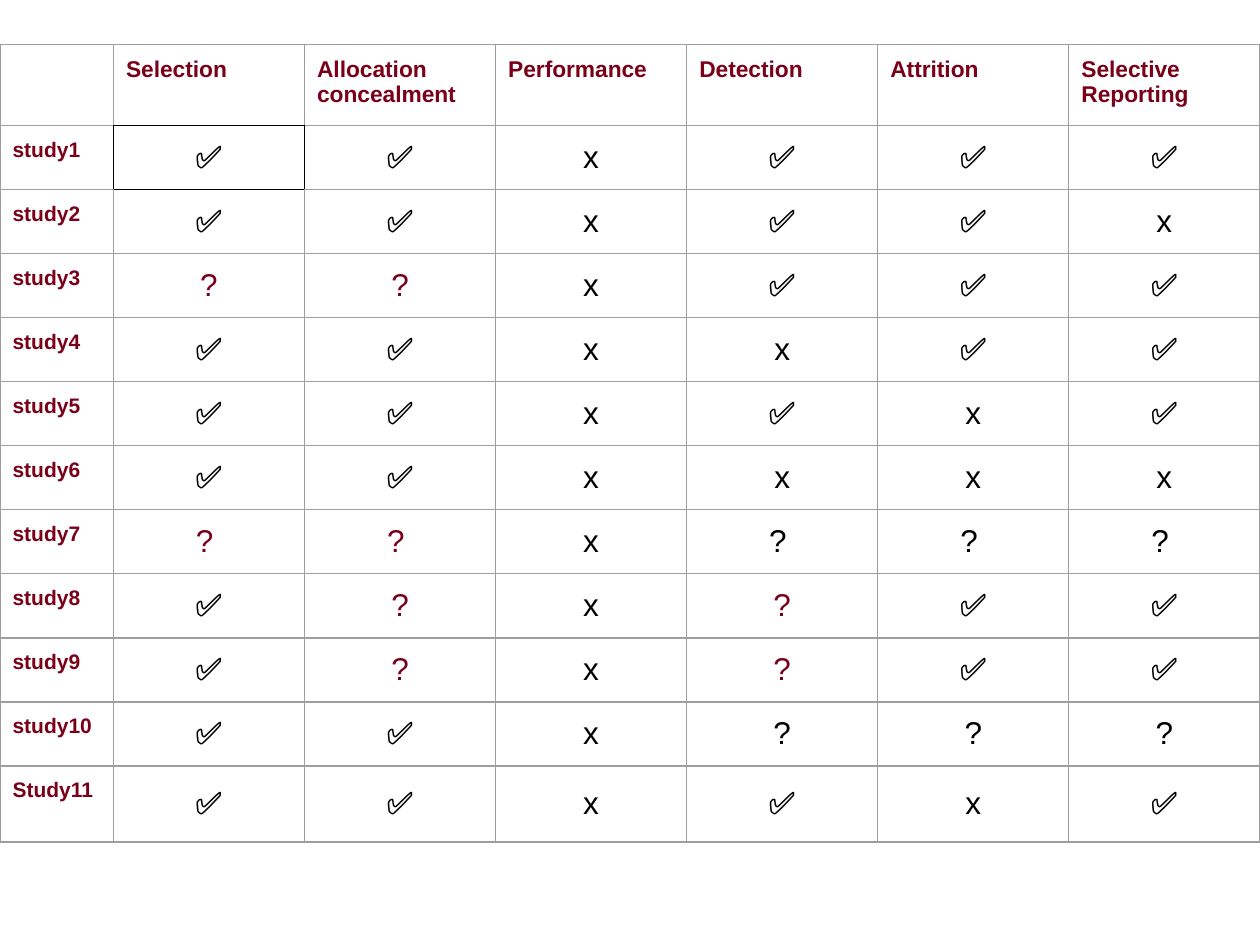
from lxml.etree import SubElement as Sub
from pptx import Presentation
from pptx.dml.color import RGBColor as Rgb
from pptx.enum.text import MSO_ANCHOR as Anchor, PP_ALIGN as Align
from pptx.oxml.ns import qn
from pptx.util import Pt

HUES = {"maroon": "7A0019", "ink": "000000", "grid": "9E9E9E"}
HEADS = ["Selection", "Allocation concealment", "Performance",
         "Detection", "Attrition", "Selective Reporting"]
CHECK, CROSS, ASK, DOUBT = "✅", "x", "?", "doubt"
MARKS = {"v": CHECK, "x": CROSS, "?": ASK, "d": DOUBT}
STUDIES = {
    "study1": "vvxvvv", "study2": "vvxvvx", "study3": "ddxvvv",
    "study4": "vvxxvv", "study5": "vvxvxv", "study6": "vvxxxx",
    "study7": "ddx???", "study8": "vdxdvv", "study9": "vdxdvv",
    "study10": "vvx???", "Study11": "vvxvxv",
}
FOCUS = (1, 1)
SIDES = {"L": (0, -1), "R": (0, 1), "T": (-1, 0), "B": (1, 0)}
PAD = 7.2
INDENT = 40


def write(cell, text, size=18, hue="ink", bold=False,
          align=Align.LEFT, anchor=Anchor.TOP, indent=0):
    """Put formatted text in a cell."""
    cell.vertical_anchor = anchor
    cell.margin_left = Pt(PAD + indent)
    para = cell.text_frame.paragraphs[0]
    para.alignment = align
    run = para.add_run()
    run.text = text
    font = run.font
    font.name, font.size, font.bold = "Arial", Pt(size), bold
    font.color.rgb = Rgb.from_string(HUES[hue])


def edge(cell, side, hue):
    """Draw one border of a cell."""
    line = Sub(cell._tc.get_or_add_tcPr(), qn(f"a:ln{side}"), w=str(Pt(0.75)))
    fill = Sub(line, qn("a:solidFill"))
    Sub(fill, qn("a:srgbClr"), val=HUES[hue])


def frame(cell, row, col):
    """Set the padding, borders and clear fill of a cell."""
    cell.margin_left = cell.margin_right = Pt(PAD)
    cell.margin_top = cell.margin_bottom = Pt(PAD)
    for side, (down, over) in SIDES.items():
        near = (row, col), (row + down, col + over)
        edge(cell, side, "ink" if FOCUS in near else "grid")
    cell.fill.background()


def make_grid(slide, wides, highs):
    """Add a plain ruled table."""
    grid = slide.shapes.add_table(len(highs), len(wides), Pt(0), Pt(25.2),
                                  Pt(sum(wides)), Pt(sum(highs))).table
    grid.first_row = grid.horz_banding = False
    for col, wide in zip(grid.columns, wides):
        col.width = Pt(wide)
    for row, high in zip(grid.rows, highs):
        row.height = Pt(high)
    for row in range(len(highs)):
        for col in range(len(wides)):
            frame(grid.cell(row, col), row, col)
    return grid


def add_mark(cell, mark, inset):
    """Write a rating, centred or indented from the left."""
    doubt = mark == DOUBT
    write(cell, ASK if doubt else mark, hue="maroon" if doubt else "ink",
          align=Align.LEFT if inset else Align.CENTER,
          anchor=Anchor.MIDDLE, indent=INDENT if inset else 0)


def main():
    """Build the risk of bias slide."""
    deck = Presentation()
    deck.slide_width, deck.slide_height = Pt(720), Pt(540)
    slide = deck.slides.add_slide(deck.slide_layouts[6])
    highs = [46.6] + [36.6] * (len(STUDIES) - 1) + [43.4]
    grid = make_grid(slide, [64.8] + [109.2] * len(HEADS), highs)
    for col, head in enumerate(HEADS, 1):
        write(grid.cell(0, col), head, size=13, hue="maroon", bold=True)
    for row, (study, codes) in enumerate(STUDIES.items(), 1):
        write(grid.cell(row, 0), study, size=12, hue="maroon", bold=True)
        for col, code in enumerate(codes, 1):
            mark = MARKS[code]
            inset = study == "study7" and mark != CROSS
            add_mark(grid.cell(row, col), mark, inset)
    deck.save("out.pptx")


if __name__ == "__main__":
    main()
